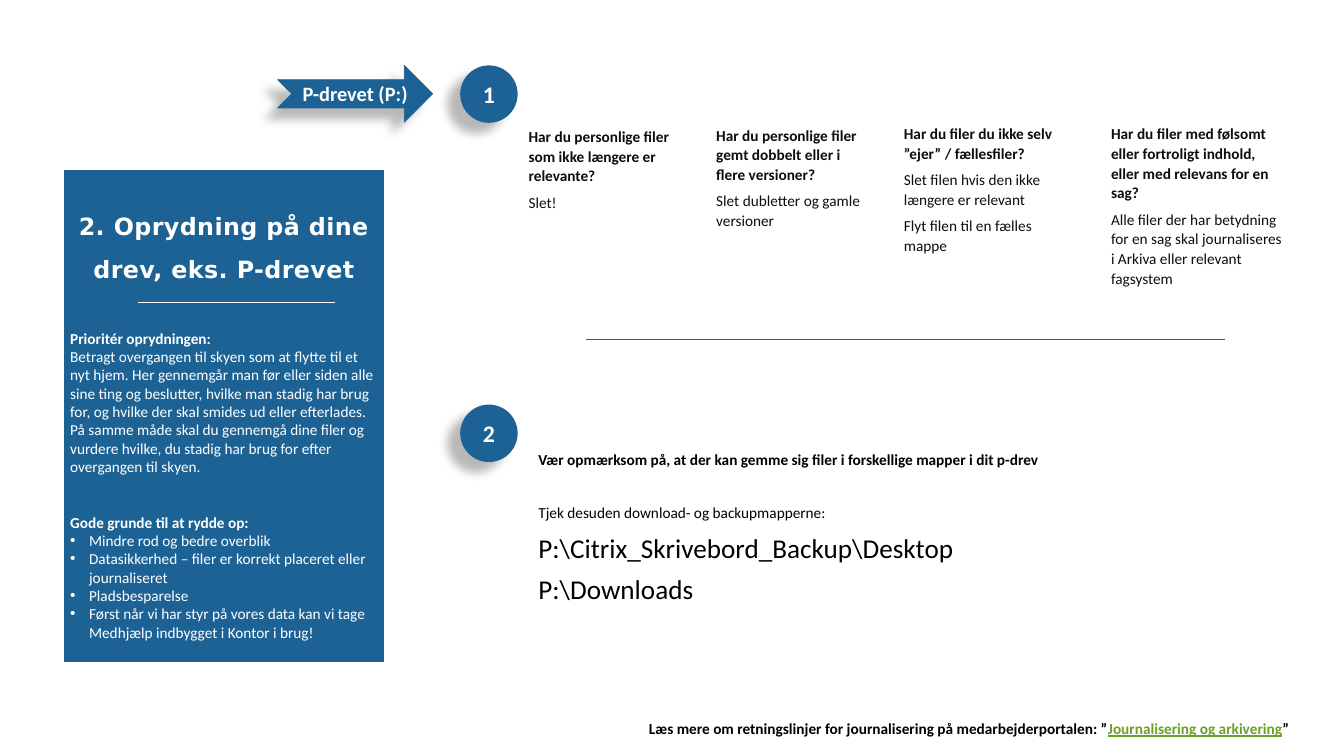
from pptx import Presentation
from pptx.dml.color import RGBColor
from pptx.enum.shapes import MSO_CONNECTOR, MSO_SHAPE
from pptx.enum.text import MSO_ANCHOR, PP_ALIGN
from pptx.oxml import parse_xml
from pptx.oxml.ns import nsdecls
from pptx.util import Inches, Pt

BLUE = RGBColor(0x1D, 0x62, 0x94)
WHITE = RGBColor(0xFF, 0xFF, 0xFF)
BLACK = RGBColor(0, 0, 0)
INK = RGBColor(0x0D, 0x0D, 0x0D)
GREEN = RGBColor(0x6B, 0x9F, 0x25)

SHADOW = (f'<a:effectLst {nsdecls("a")}><a:outerShdw blurRad="150000" '
          'dist="250000" dir="8460000" algn="tr" rotWithShape="0">'
          '<a:srgbClr val="000000"><a:alpha val="28000"/></a:srgbClr>'
          '</a:outerShdw></a:effectLst>')
BULLET_FONT = f'<a:buFont {nsdecls("a")} typeface="Arial"/>'
BULLET = f'<a:buChar {nsdecls("a")} char="•"/>'

QUESTIONS = [
    (8.55, 2.01, 2.68, 1.51,
     "Har du personlige filer som ikke længere er relevante?",
     ["Slet!"]),
    (11.62, 1.99, 2.68, 1.82,
     "Har du personlige filer gemt dobbelt eller i flere versioner?",
     ["Slet dubletter og gamle versioner"]),
    (14.69, 1.97, 2.99, 2.27,
     "Har du filer du ikke selv ”ejer” / fællesfiler?",
     ["Slet filen hvis den ikke længere er relevant",
      "Flyt filen til en fælles mappe"]),
    (18.08, 1.97, 3.03, 2.79,
     "Har du filer med følsomt eller fortroligt indhold, "
     "eller med relevans for en sag?",
     ["Alle filer der har betydning for en sag skal journaliseres "
      "i Arkiva eller relevant fagsystem"]),
]
PRIORITY = (
    "Betragt overgangen til skyen som at flytte til et nyt hjem. Her gennemgår "
    "man før eller siden alle sine ting og beslutter, hvilke man stadig har "
    "brug for, og hvilke der skal smides ud eller efterlades. På samme måde "
    "skal du gennemgå dine filer og vurdere hvilke, du stadig har brug for "
    "efter overgangen til skyen.")
REASONS = [
    "Mindre rod og bedre overblik",
    "Datasikkerhed – filer er korrekt placeret eller journaliseret",
    "Pladsbesparelse",
    "Først når vi har styr på vores data kan vi tage "
    "Medhjælp indbygget i Kontor i brug!",
]


def add_run(para, text, color, size=18, bold=False, name="Calibri"):
    run = para.add_run()
    run.text = text
    font = run.font
    font.name, font.size, font.bold = name, Pt(size), bold
    font.color.rgb = color
    return run


def next_para(frame):
    """Return the empty first paragraph, or a new one."""
    first = frame.paragraphs[0]
    return frame.add_paragraph() if first.runs else first


def add_para(frame, before=0):
    """Add a paragraph with the spacing of the right-hand texts."""
    para = next_para(frame)
    para.line_spacing, para.space_after = 1.07, Pt(8)
    if before:
        para.space_before = Pt(before)
    return para


def add_text(slide, x, y, w, h):
    box = slide.shapes.add_textbox(Inches(x), Inches(y), Inches(w), Inches(h))
    box.text_frame.word_wrap = True
    return box.text_frame


def add_block(slide, kind, x, y, w, h):
    shape = slide.shapes.add_shape(
        kind, Inches(x), Inches(y), Inches(w), Inches(h))
    shape.shadow.inherit = False
    shape.fill.solid()
    shape.fill.fore_color.rgb = BLUE
    shape.line.color.rgb = BLUE
    shape.line.width = Pt(0.75)
    shape.text_frame.word_wrap = True
    return shape


def add_label(slide, kind, x, y, w, h, text, size):
    """Add a blue shape with a soft shadow and a centred label."""
    shape = add_block(slide, kind, x, y, w, h)
    props = shape._element.spPr
    props.remove(props.find("{*}effectLst"))
    props.append(parse_xml(SHADOW))
    frame = shape.text_frame
    frame.vertical_anchor = MSO_ANCHOR.MIDDLE
    para = frame.paragraphs[0]
    para.alignment = PP_ALIGN.CENTER
    add_run(para, text, WHITE, size, True)
    return shape


def add_badge(slide, x, y, text):
    badge = add_label(slide, MSO_SHAPE.OVAL, x, y, 0.94, 0.94, text, 28)
    badge.line.fill.background()


def add_rule(slide, x, y, w, color):
    rule = slide.shapes.add_connector(
        MSO_CONNECTOR.STRAIGHT, Inches(x), Inches(y), Inches(x + w), Inches(y))
    rule.line.color.rgb = color
    rule.line.width = Pt(0.5)
    rule._element.spPr.append(parse_xml(f'<a:effectLst {nsdecls("a")}/>'))


def add_panel(slide, x, y, w, h):
    frame = add_block(slide, MSO_SHAPE.RECTANGLE, x, y, w, h).text_frame
    frame.vertical_anchor = MSO_ANCHOR.TOP
    frame.margin_top = Inches(0.44)
    title = next_para(frame)
    title.alignment, title.line_spacing = PP_ALIGN.CENTER, 1.5
    run = add_run(title, "2. Oprydning på dine drev, eks. P-drevet",
                  WHITE, 28, True, "DejaVu Sans")
    run.font._element.set("spc", "50")

    rows = [("Prioritér oprydningen:", True, 54), (PRIORITY, False, 0),
            ("Gode grunde til at rydde op:", True, 44)]
    for text, bold, before in rows:
        para = next_para(frame)
        para.alignment, para.space_before = PP_ALIGN.LEFT, Pt(before)
        add_run(para, text, WHITE, bold=bold)
    for text in REASONS:
        para = next_para(frame)
        para.alignment = PP_ALIGN.LEFT
        props = para._p.get_or_add_pPr()
        props.set("marL", str(Inches(0.31)))
        props.set("indent", str(-Inches(0.31)))
        props.append(parse_xml(BULLET_FONT))
        props.append(parse_xml(BULLET))
        add_run(para, text, WHITE)
    add_rule(slide, x + 1.2, y + 2.15, 3.23, WHITE)


def add_question(slide, x, y, w, h, head, steps):
    frame = add_text(slide, x, y, w, h)
    add_run(add_para(frame), head, INK, bold=True)
    for step in steps:
        add_run(add_para(frame), step, INK)


def add_folders(slide, x, y, w, h):
    frame = add_text(slide, x, y, w, h)
    add_run(add_para(frame), "Vær opmærksom på, at der kan gemme sig filer i "
            "forskellige mapper i dit p-drev", BLACK, bold=True)
    add_run(add_para(frame, 31.5),
            "Tjek desuden download- og backupmapperne:", BLACK)
    for folder in ("P:\\Citrix_Skrivebord_Backup\\Desktop", "P:\\Downloads"):
        add_run(add_para(frame), folder, BLACK, 32)


def add_footer(slide, x, y, w, h):
    para = add_para(add_text(slide, x, y, w, h))
    add_run(para, "Læs mere om retningslinjer for journalisering på "
            "medarbejderportalen: ”", BLACK, bold=True)
    link = add_run(para, "Journalisering og arkivering", GREEN, bold=True)
    link.font.underline = True
    add_run(para, "”", BLACK, bold=True)


def main():
    deck = Presentation()
    deck.slide_width, deck.slide_height = Inches(21.99), Inches(12.37)
    slide = deck.slides.add_slide(deck.slide_layouts[6])
    add_badge(slide, 7.53, 1.07, "1")
    for question in QUESTIONS:
        add_question(slide, *question)
    add_rule(slide, 9.58, 5.55, 10.47, BLUE)
    add_badge(slide, 7.53, 6.62, "2")
    add_folders(slide, 8.71, 7.3, 8.5, 2.65)
    add_label(slide, MSO_SHAPE.NOTCHED_RIGHT_ARROW,
              4.54, 1.07, 2.54, 0.93, "P-drevet (P:)", 24)
    add_panel(slide, 1.05, 2.79, 5.23, 8.03)
    add_footer(slide, 10.52, 11.7, 11.65, 0.43)
    deck.save("out.pptx")


if __name__ == "__main__":
    main()
